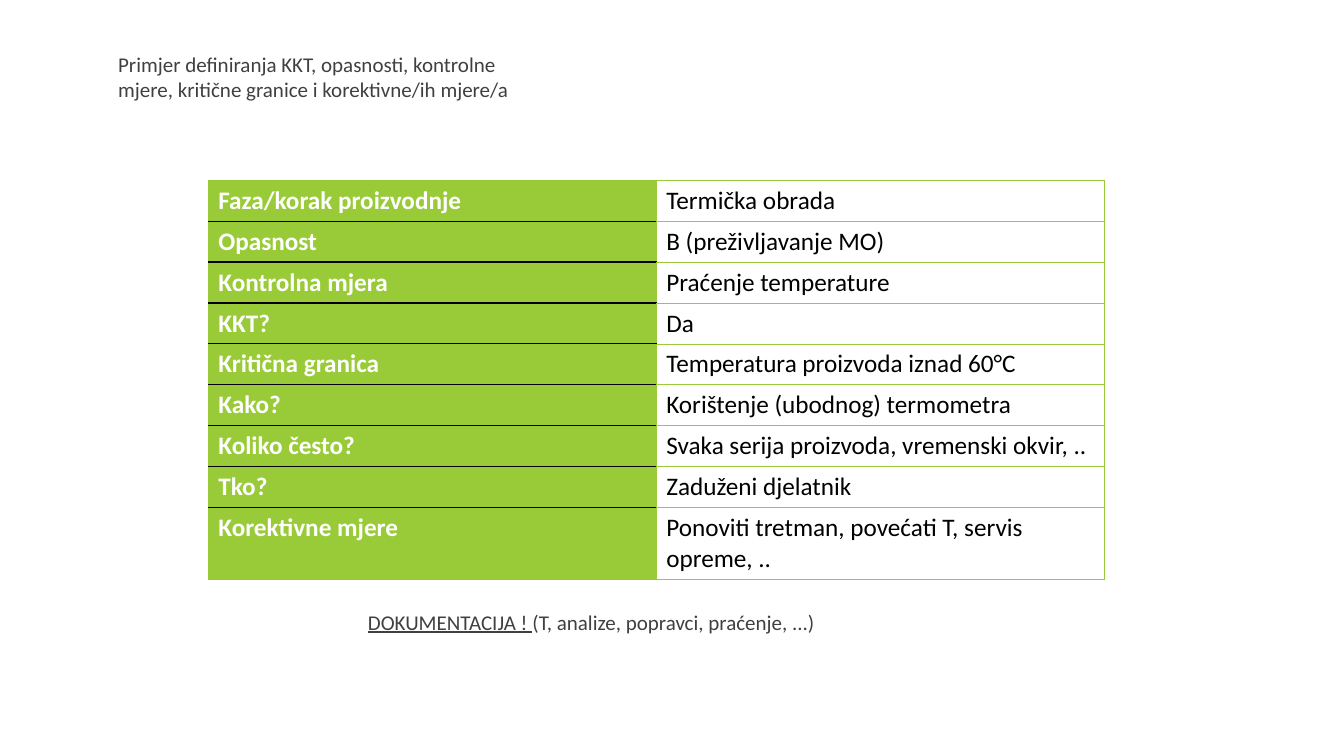
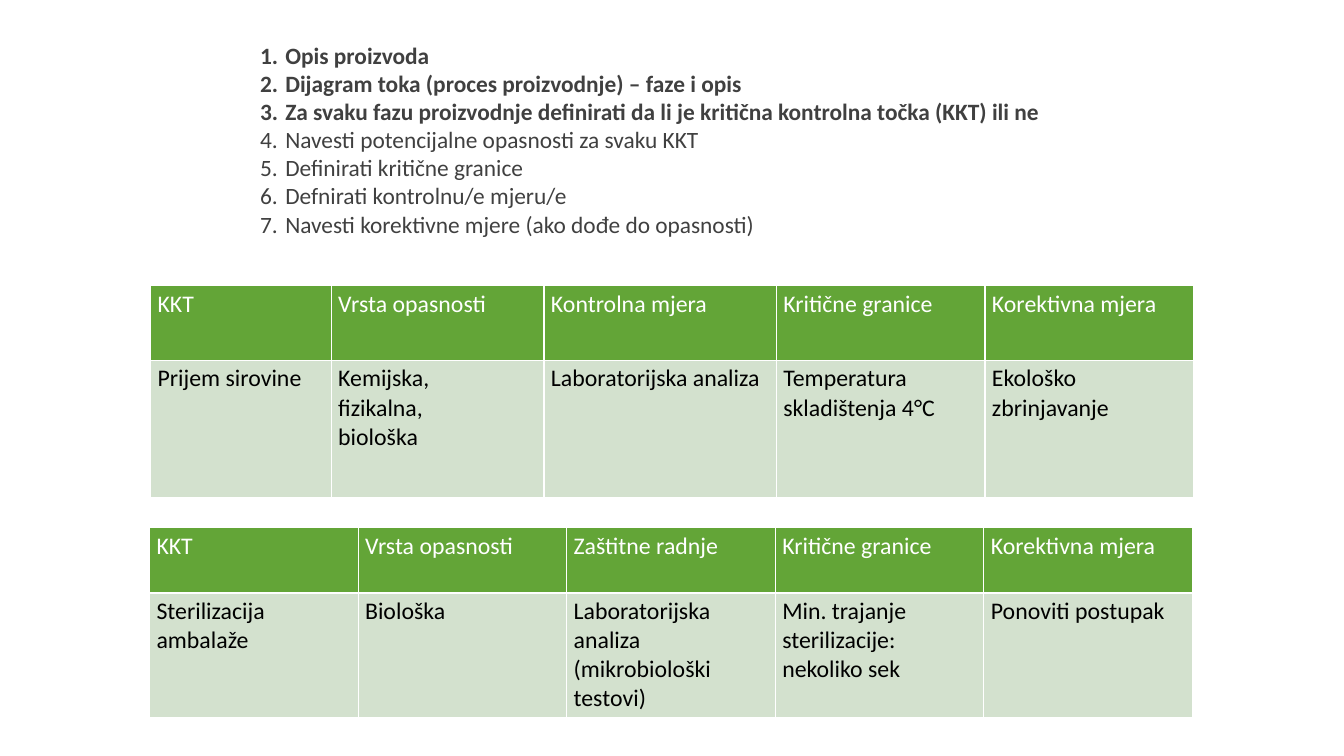
from pptx import Presentation
from pptx.dml.color import RGBColor
from pptx.enum.text import MSO_ANCHOR, MSO_AUTO_SIZE, PP_ALIGN
from pptx.oxml.ns import qn
from pptx.util import Pt
from lxml import etree

TOP = MSO_ANCHOR.TOP
NO_AUTOFIT = MSO_AUTO_SIZE.NONE
LEFT = PP_ALIGN.LEFT

FONT = "Calibri"
TEXT = RGBColor(0x40, 0x40, 0x40)
BLACK = RGBColor(0x00, 0x00, 0x00)
WHITE = RGBColor(0xFF, 0xFF, 0xFF)
LIME = RGBColor(0x99, 0xCB, 0x38)
GREEN = RGBColor(0x63, 0xA5, 0x37)
PALE = RGBColor(0xD3, 0xE1, 0xCE)

EXAMPLE = [
    ("Faza/korak proizvodnje", "Termička obrada"),
    ("Opasnost", "B (preživljavanje MO)"),
    ("Kontrolna mjera", "Praćenje temperature"),
    ("KKT?", "Da"),
    ("Kritična granica", "Temperatura proizvoda iznad 60°C"),
    ("Kako?", "Korištenje (ubodnog) termometra"),
    ("Koliko često?", "Svaka serija proizvoda, vremenski okvir, .."),
    ("Tko?", "Zaduženi djelatnik"),
    ("Korektivne mjere", "Ponoviti tretman, povećati T, servis opreme, .."),
]
STEPS = [
    ("Opis proizvoda", True),
    ("Dijagram toka (proces proizvodnje) – faze i opis", True),
    ("Za svaku fazu proizvodnje definirati da li je kritična kontrolna točka (KKT) ili ne", True),
    ("Navesti potencijalne opasnosti za svaku KKT", False),
    ("Definirati kritične granice", False),
    ("Defnirati kontrolnu/e mjeru/e", False),
    ("Navesti korektivne mjere (ako dođe do opasnosti)", False),
]
INTAKE = [
    ("KKT", "Vrsta opasnosti", "Kontrolna mjera", "Kritične granice", "Korektivna mjera"),
    ("Prijem sirovine", "Kemijska,\nfizikalna,\nbiološka", "Laboratorijska analiza",
     "Temperatura skladištenja 4°C", "Ekološko zbrinjavanje"),
]
STERILIZATION = [
    ("KKT", "Vrsta opasnosti", "Zaštitne radnje", "Kritične granice", "Korektivna mjera"),
    ("Sterilizacija ambalaže", "Biološka", "Laboratorijska analiza (mikrobiološki testovi)",
     "Min. trajanje sterilizacije: nekoliko sek", "Ponoviti postupak"),
]


def add_run(p, text, size, color, bold=False, underline=False):
    r = p.add_run()
    r.text = text
    r.font.name = FONT
    r.font.size = Pt(size)
    r.font.color.rgb = color
    r.font.bold = bold
    r.font.underline = underline


def place(sp, x, y, w, h):
    sp.left, sp.top, sp.width, sp.height = Pt(x), Pt(y), Pt(w), Pt(h)
    tf = sp.text_frame
    tf.word_wrap = True
    tf.auto_size = NO_AUTOFIT
    tf.vertical_anchor = TOP
    tf.margin_left = tf.margin_top = tf.margin_right = tf.margin_bottom = 0
    tf.paragraphs[0].alignment = LEFT
    return tf


def set_numbered(p):
    pPr = p._p.get_or_add_pPr()
    pPr.set("marL", str(Pt(18)))
    pPr.set("indent", str(-Pt(18)))
    etree.SubElement(pPr, qn("a:buFont"), typeface="+mj-lt")
    etree.SubElement(pPr, qn("a:buAutoNum"), type="arabicPeriod")
    p.space_before = Pt(0)


def set_borders(cell, **sides):
    tcPr = cell._tc.get_or_add_tcPr()
    for i, side in enumerate("LRTB"):
        color, width = sides[side]
        ln = etree.Element(qn("a:ln" + side), w=str(Pt(width)))
        fill = etree.SubElement(ln, qn("a:solidFill"))
        etree.SubElement(fill, qn("a:srgbClr"), val=str(color))
        tcPr.insert(i, ln)


def fill_cell(cell, text, size, color, fill, bold=False):
    cell.fill.solid()
    cell.fill.fore_color.rgb = fill
    tf = cell.text_frame
    for i, line in enumerate(text.split("\n")):
        p = tf.add_paragraph() if i else tf.paragraphs[0]
        add_run(p, line, size, color, bold)


def add_grid(s, x, y, widths, heights):
    shape = s.shapes.add_table(len(heights), len(widths), Pt(x), Pt(y),
                               Pt(sum(widths)), Pt(sum(heights)))
    table = shape.table
    table.horz_banding = False
    for col, w in zip(table.columns, widths):
        col.width = Pt(w)
    for row, h in zip(table.rows, heights):
        row.height = Pt(h)
    return table


def add_example_table(s):
    last = len(EXAMPLE) - 1
    table = add_grid(s, 148.8, 128.8, [320, 320], [29.2] * last + [51.2])
    table.first_row = False
    table.first_col = True
    edge, rule = (LIME, 0.5), (BLACK, 1)
    for i, (label, value) in enumerate(EXAMPLE):
        left, right = table.cell(i, 0), table.cell(i, 1)
        fill_cell(left, label, 18, WHITE, LIME, bold=True)
        fill_cell(right, value, 18, BLACK, WHITE)
        set_borders(left, L=edge, R=edge, T=rule if i else edge,
                    B=rule if i < last else edge)
        set_borders(right, L=edge, R=edge, T=edge, B=edge)


def add_hazard_table(s, x, y, widths, heights, rows):
    table = add_grid(s, x, y, widths, heights)
    line = (WHITE, 1)
    for i, row in enumerate(rows):
        color, fill = (BLACK, PALE) if i else (WHITE, GREEN)
        for j, text in enumerate(row):
            cell = table.cell(i, j)
            cell.margin_left = cell.margin_right = Pt(5)
            cell.margin_top = cell.margin_bottom = Pt(2.8)
            fill_cell(cell, text, 17, color, fill)
            set_borders(cell, L=line, R=line, T=line, B=line)


def build_example(prs):
    s = prs.slides.add_slide(prs.slide_layouts[5])
    tf = place(s.shapes.title, 84.4, 37, 310, 58)
    add_run(tf.paragraphs[0], "Primjer definiranja KKT, opasnosti, kontrolne mjere, "
            "kritične granice i korektivne/ih mjere/a", 15, TEXT)
    add_example_table(s)
    tf = place(s.shapes.add_textbox(0, 0, 0, 0), 262.8, 435, 340.5, 46)
    p = tf.paragraphs[0]
    add_run(p, "DOKUMENTACIJA ! ", 15, TEXT, underline=True)
    add_run(p, "(T, analize, popravci, praćenje, ...)", 15, TEXT)


def build_steps(prs):
    s = prs.slides.add_slide(prs.slide_layouts[1])
    title = s.shapes.title.element
    title.getparent().remove(title)
    tf = place(s.placeholders[1], 185.8, 29.5, 625.7, 67)
    for i, (text, bold) in enumerate(STEPS):
        p = tf.add_paragraph() if i else tf.paragraphs[0]
        set_numbered(p)
        add_run(p, text, 16.7, TEXT, bold)
    add_hazard_table(s, 107.6, 204, [129, 152, 166, 149, 149], [53.4, 97.8], INTAKE)
    add_hazard_table(s, 106.8, 376.8, [149] * 5, [46.8, 88], STERILIZATION)


def main():
    prs = Presentation()
    prs.slide_width, prs.slide_height = Pt(960), Pt(540)
    build_example(prs)
    build_steps(prs)
    prs.save("out.pptx")


if __name__ == "__main__":
    main()
